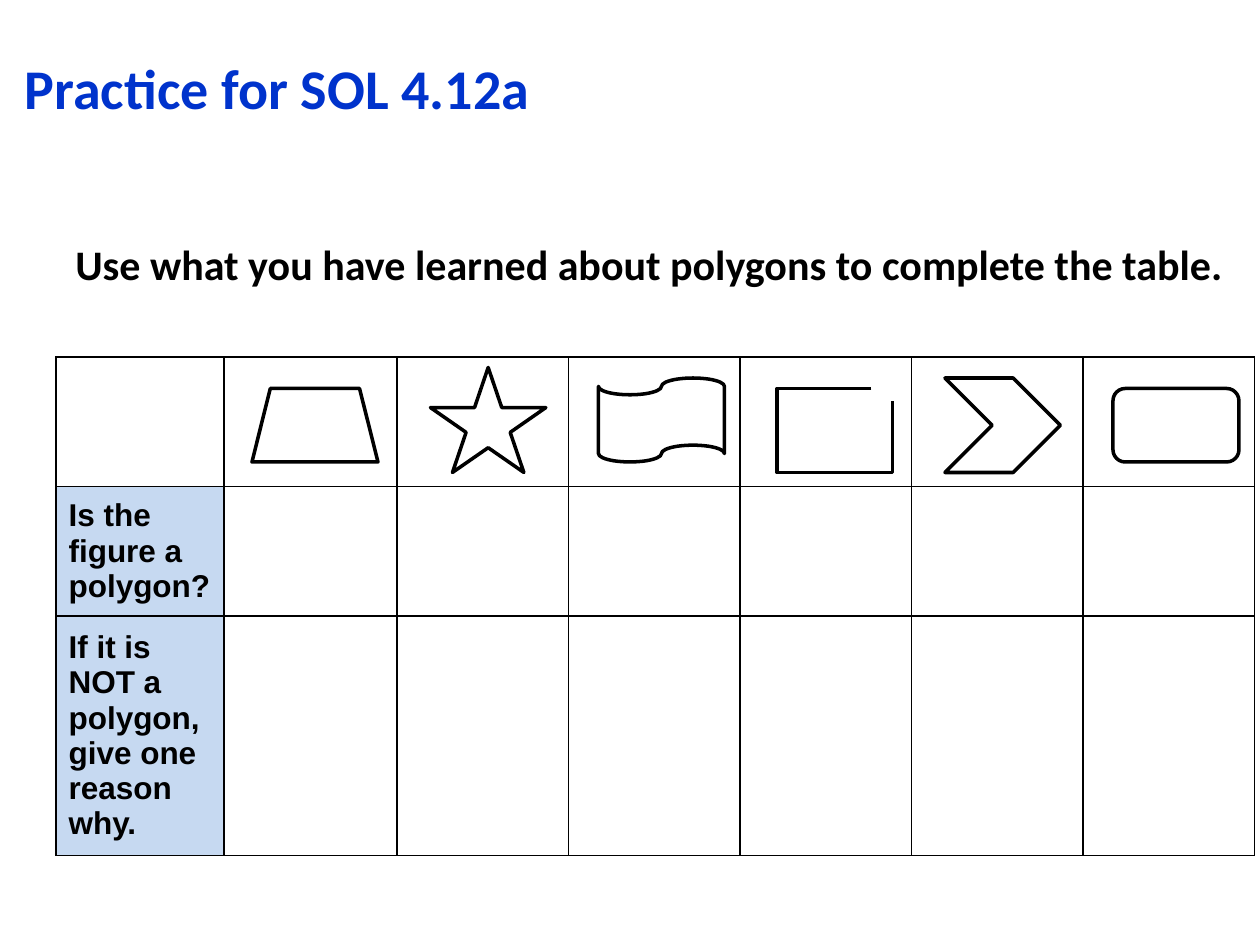
from lxml import etree
from pptx import Presentation
from pptx.dml.color import RGBColor
from pptx.enum import shapes, text
from pptx.oxml import ns
from pptx.util import Pt

COLORS = {"title": "0033CC", "ink": "000000", "paper": "FFFFFF", "label": "C6D9F1"}


def tint(name):
    return RGBColor.from_string(COLORS[name])


class Sheet:
    """Style and current slide; all lengths are in points."""
    head = "Calibri"
    body = "Arial"
    line = 2
    rule = 1

    def __init__(self, deck):
        self.slide = deck.slides.add_slide(deck.slide_layouts[5])
        self.items = self.slide.shapes

    def put(self, frame, words, font, size, color="ink"):
        frame.word_wrap = True
        para = frame.paragraphs[0]
        para.alignment = text.PP_ALIGN.LEFT
        run = para.add_run()
        run.text = words
        run.font.name, run.font.size, run.font.bold = font, Pt(size), True
        run.font.color.rgb = tint(color)

    def title(self, words, x, y, w, h):
        item = self.items.title
        item.left, item.top, item.width, item.height = map(Pt, (x, y, w, h))
        item.text_frame.vertical_anchor = text.MSO_ANCHOR.MIDDLE
        self.put(item.text_frame, words, self.head, 32, "title")

    def note(self, words, x, y, w, h):
        box = self.items.add_textbox(*map(Pt, (x, y, w, h)))
        self.put(box.text_frame, words, self.head, 24)

    def border(self, cell):
        props = cell._tc.get_or_add_tcPr()
        for spot, side in enumerate(("lnL", "lnR", "lnT", "lnB")):
            edge = etree.Element(ns.qn("a:" + side), w=str(Pt(self.rule)))
            fill = etree.SubElement(edge, ns.qn("a:solidFill"))
            etree.SubElement(fill, ns.qn("a:srgbClr"), val=COLORS["ink"])
            props.insert(spot, edge)

    def table(self, labels, x, y, cols, rows):
        frame = self.items.add_table(len(rows), len(cols), Pt(x), Pt(y),
                                     Pt(sum(cols)), Pt(sum(rows)))
        grid = frame.table
        grid.first_row = grid.horz_banding = False
        for col, width in zip(grid.columns, cols):
            col.width = Pt(width)
        for row, height, label in zip(grid.rows, rows, labels):
            row.height = Pt(height)
            for cell in row.cells:
                cell.fill.solid()
                cell.fill.fore_color.rgb = tint("paper")
                self.border(cell)
            if label:
                first = row.cells[0]
                first.fill.fore_color.rgb = tint("label")
                first.vertical_anchor = text.MSO_ANCHOR.MIDDLE
                self.put(first.text_frame, label, self.body, 18)

    def ink(self, item):
        item.shadow.inherit = False
        item.fill.solid()
        item.fill.fore_color.rgb = tint("paper")
        item.line.color.rgb = tint("ink")
        item.line.width = Pt(self.line)

    def figure(self, kind, x, y, w, h):
        self.ink(self.items.add_shape(kind, *map(Pt, (x, y, w, h))))

    def trace(self, start, *points):
        pen = self.items.build_freeform(*map(Pt, start))
        pen.add_line_segments([tuple(map(Pt, p)) for p in points], close=False)
        self.ink(pen.convert_to_shape())


def main():
    deck = Presentation()
    deck.slide_width, deck.slide_height = Pt(720), Pt(540)
    sheet = Sheet(deck)

    # Heading and task
    sheet.title("Practice for SOL 4.12a", 7, 5, 696, 90)
    sheet.note("Use what you have learned about polygons to complete the table.",
               36, 133, 684, 37)

    # Answer table
    labels = ["", "Is the figure a polygon?",
              "If it is NOT a polygon, give one reason why."]
    sheet.table(labels, 32, 204, [96, 99] + [98] * 5, [74, 74, 128])

    # Figures in the top row
    kind = shapes.MSO_SHAPE
    for figure in (
        (kind.TRAPEZOID, 144, 222, 72, 42),
        (kind.STAR_5_POINT, 246, 210, 66, 60),
        (kind.FLOWCHART_PUNCHED_TAPE, 342, 216, 72, 48),
        (kind.CHEVRON, 540, 216, 66, 54),
        (kind.ROUNDED_RECTANGLE, 636, 222, 72, 42),
    ):
        sheet.figure(*figure)

    # Rectangle left open at its top right corner
    sheet.trace((498, 222), (444, 222), (444, 270), (510, 270), (510, 229))

    deck.save("out.pptx")


if __name__ == "__main__":
    main()
